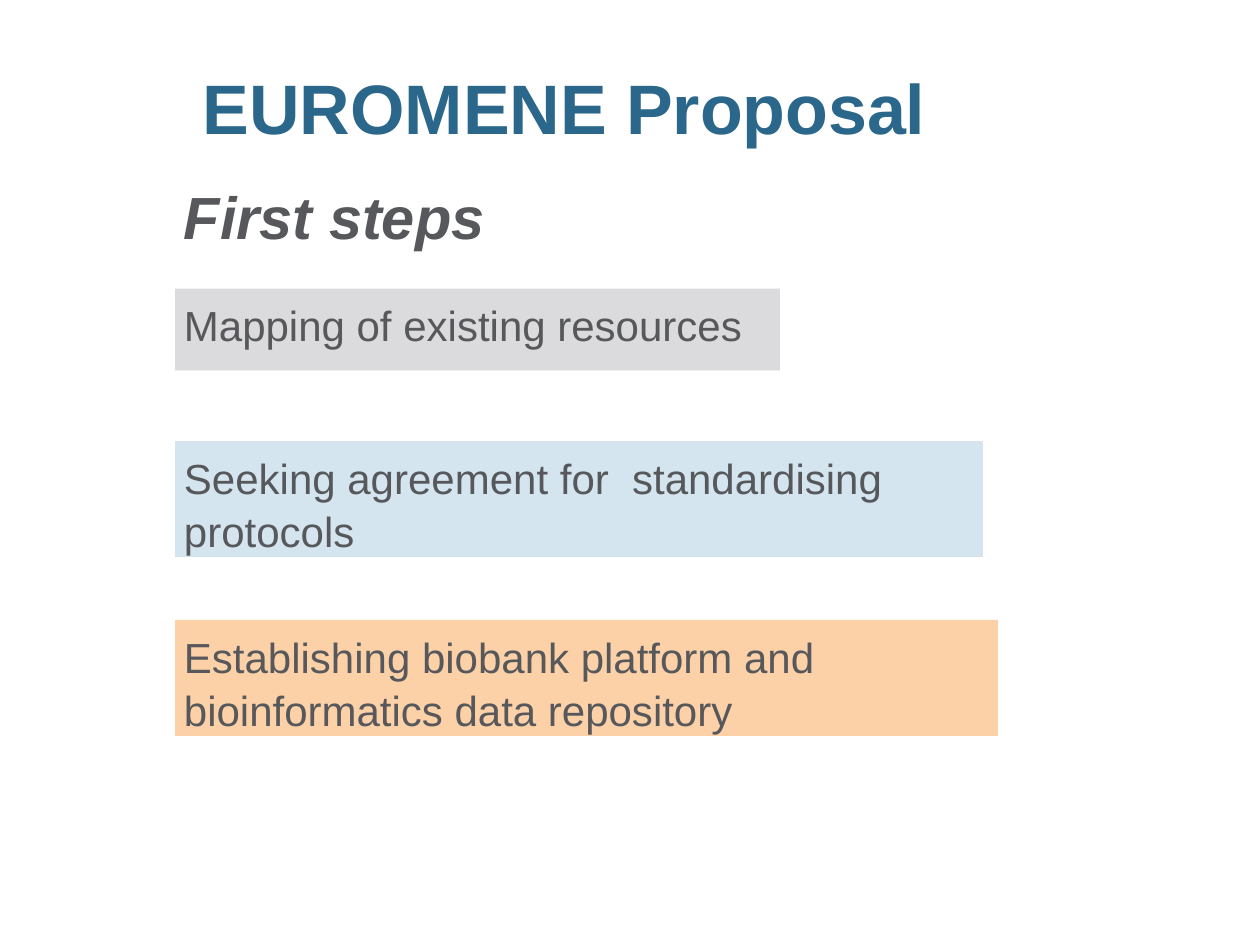
"""Build the EUROMENE proposal slide with its first steps."""
from pptx import Presentation
from pptx.dml.color import RGBColor
from pptx.enum.shapes import MSO_SHAPE
from pptx.enum.text import MSO_ANCHOR, PP_ALIGN
from pptx.util import Inches, Pt

RECT = MSO_SHAPE.RECTANGLE
TOP = MSO_ANCHOR.TOP
LEFT = PP_ALIGN.LEFT
BLUE = RGBColor(0x2A, 0x67, 0x8B)
GREY = RGBColor(0x56, 0x58, 0x5B)
SILVER = RGBColor(0xDB, 0xDA, 0xDC)
SKY = RGBColor(0xD5, 0xE5, 0xEF)
PEACH = RGBColor(0xFD, 0xD1, 0xA7)

deck = Presentation()
deck.slide_width = Inches(10)
deck.slide_height = Inches(7.5)
slide = deck.slides.add_slide(deck.slide_layouts[6])

EDGE = 1.39
INSET = Inches(0.07)
FRAME = {
    "word_wrap": True, "vertical_anchor": TOP,
    "margin_left": INSET, "margin_right": INSET,
    "margin_top": INSET, "margin_bottom": 0,
}
HEAD = {"size": Pt(40), "bold": True}
LEAD = {"size": Pt(34), "bold": True, "italic": True}
STEP = {"size": Pt(24)}


def write(shape, text, color, style):
    """Put one styled line of text in a shape."""
    frame = shape.text_frame
    for key, value in FRAME.items():
        setattr(frame, key, value)
    para = frame.paragraphs[0]
    para.text = text
    para.alignment = LEFT
    para.line_spacing = 1.05
    font = para.runs[0].font
    font.name = "Arial"
    font.color.rgb = color
    for key, value in style.items():
        setattr(font, key, value)


titles = [
    ("First steps", (EDGE, 1.33, 3.14, 0.67), GREY, LEAD),
    ("EUROMENE Proposal", (1.54, 0.41, 7.72, 0.93), BLUE, HEAD),
]
for text, place, color, style in titles:
    box = slide.shapes.add_textbox(*map(Inches, place))
    write(box, text, color, style)

steps = [
    ("Mapping of existing resources", 2.29, 4.8, 0.65, SILVER),
    ("Seeking agreement for  standardising protocols", 3.5, 6.41, 0.92, SKY),
    ("Establishing biobank platform and bioinformatics data repository",
     4.92, 6.53, 0.92, PEACH),
]
for text, top, width, height, fill in steps:
    bar = slide.shapes.add_shape(
        RECT, *map(Inches, (EDGE, top, width, height)))
    bar.shadow.inherit = False
    bar.fill.solid()
    bar.fill.fore_color.rgb = fill
    bar.line.fill.background()
    write(bar, text, GREY, STEP)

deck.save("out.pptx")
